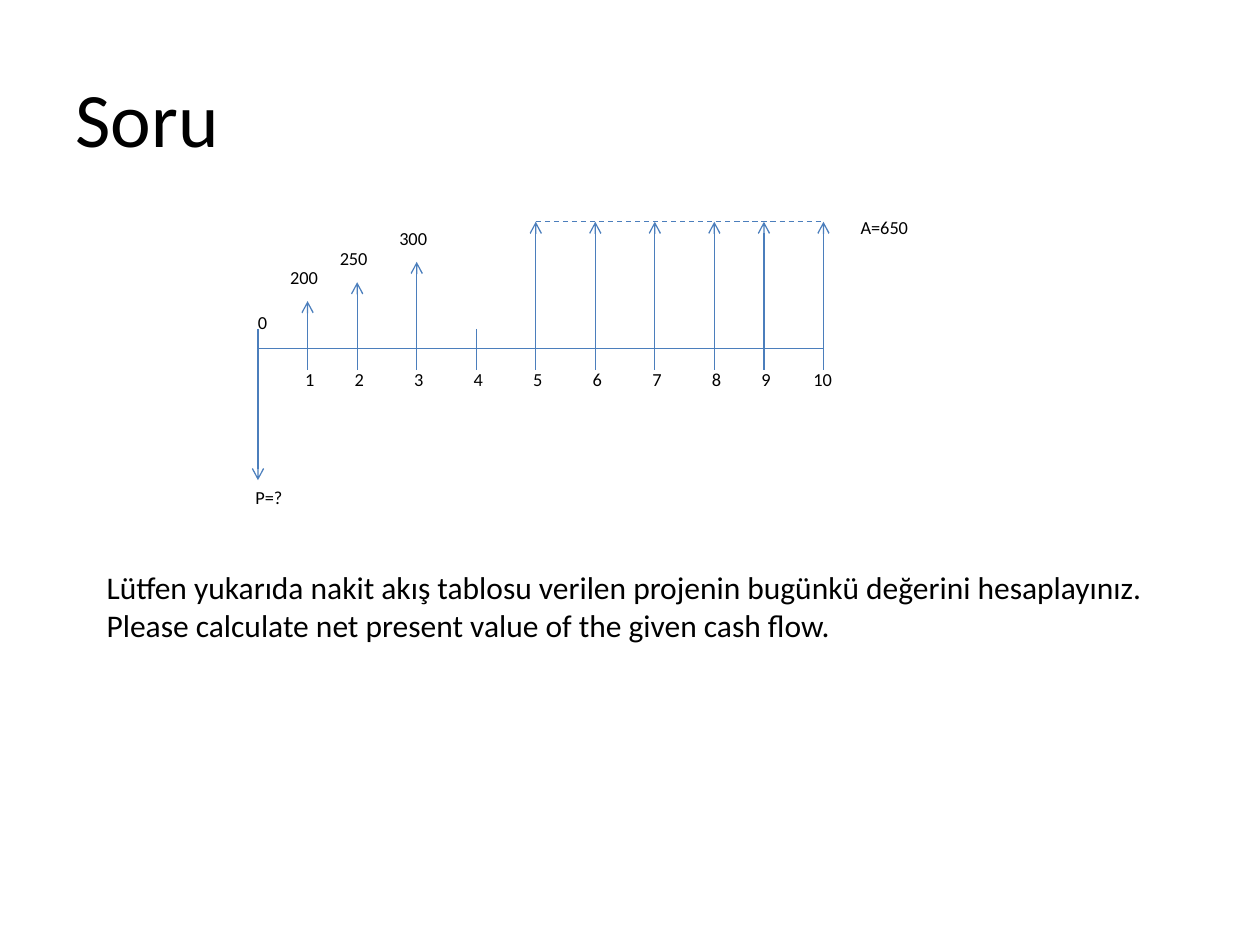
from dataclasses import dataclass

from lxml import etree
from pptx import Presentation
from pptx.dml.color import RGBColor
from pptx.enum.dml import MSO_LINE
from pptx.enum.shapes import MSO_CONNECTOR
from pptx.enum.text import MSO_ANCHOR, PP_ALIGN
from pptx.oxml.ns import qn
from pptx.shapes.connector import Connector
from pptx.text.text import TextFrame
from pptx.util import Cm, Pt

STRAIGHT = MSO_CONNECTOR.STRAIGHT
DASH = MSO_LINE.DASH
LEFT = PP_ALIGN.LEFT
MIDDLE = MSO_ANCHOR.MIDDLE

FONT = "Calibri"
COLORS = {"text": "000000", "line": "4B7EBC"}

# Diagram measures in centimetres
AXIS_Y = 7.02
TICK_HALF = 0.39
ANNUITY_RISE = 2.55
ANNUITY_Y = AXIS_Y - ANNUITY_RISE
PAYMENT_DROP = 2.66
PERIOD_LABEL_Y = 7.29
LABEL_HEIGHT = 0.71
LABEL_SIZE = 10.5


@dataclass
class Period:
    number: int
    x: float
    rise: float = 0
    amount: str = ""


@dataclass
class Label:
    text: str
    x: float
    y: float
    width: float


PERIODS = [
    Period(0, 5.2, -PAYMENT_DROP),
    Period(1, 6.2, 0.95, "200"),
    Period(2, 7.2, 1.33, "250"),
    Period(3, 8.4, 1.74, "300"),
    Period(4, 9.6),
    *(Period(n, x, ANNUITY_RISE)
      for n, x in enumerate((10.8, 12, 13.2, 14.4, 15.4, 16.6), start=5)),
]
START_X, END_X = PERIODS[0].x, PERIODS[-1].x

LABELS = [
    Label("A=650", 17.1, 4.24, 1.8),
    Label("0", 4.95, 6.15, 0.6),
    Label("P=?", 4.9, AXIS_Y + PAYMENT_DROP, 1.6),
]

QUESTION = [
    "Lütfen yukarıda nakit akış tablosu verilen projenin bugünkü değerini hesaplayınız.",
    "Please calculate net present value of the given cash flow.",
]


def write(tf: TextFrame, lines: list[str], size: float) -> None:
    tf.word_wrap = True
    for i, line in enumerate(lines):
        p = tf.add_paragraph() if i else tf.paragraphs[0]
        p.alignment = LEFT
        r = p.add_run()
        r.text = line
        r.font.name = FONT
        r.font.size = Pt(size)
        r.font.color.rgb = RGBColor.from_string(COLORS["text"])


def add_line(shapes, x1: float, y1: float, x2: float, y2: float) -> Connector:
    line = shapes.add_connector(STRAIGHT, Cm(x1), Cm(y1), Cm(x2), Cm(y2))
    line.line.color.rgb = RGBColor.from_string(COLORS["line"])
    line.line.width = Pt(0.75)
    etree.SubElement(line._element.spPr, qn("a:effectLst"))
    return line


def add_arrow(shapes, x: float, rise: float) -> None:
    """Draw a vertical cash flow from the axis; a negative rise points down."""
    arrow = add_line(shapes, x, AXIS_Y, x, AXIS_Y - rise)
    etree.SubElement(arrow.line._get_or_add_ln(), qn("a:tailEnd"), type="arrow")


def add_label(shapes, label: Label) -> None:
    box = shapes.add_textbox(Cm(label.x), Cm(label.y),
                             Cm(label.width), Cm(LABEL_HEIGHT))
    write(box.text_frame, [label.text], LABEL_SIZE)


def period_labels(period: Period) -> list[Label]:
    """Place the number below the axis and the amount above the arrow tip."""
    labels = []
    if period.number:
        text = str(period.number)
        width = 0.6 if len(text) == 1 else 0.98
        left = period.x - 0.3 if len(text) == 1 else period.x - 0.45
        labels.append(Label(text, left, PERIOD_LABEL_Y, width))
    if period.amount:
        top = AXIS_Y - period.rise - 0.83
        labels.append(Label(period.amount, period.x - 0.6, top, 1.2))
    return labels


def add_cash_flow(shapes) -> None:
    add_line(shapes, START_X, AXIS_Y, END_X, AXIS_Y)
    for period in PERIODS:
        add_line(shapes, period.x, AXIS_Y - TICK_HALF,
                 period.x, AXIS_Y + TICK_HALF + 0.04)
        if period.rise:
            add_arrow(shapes, period.x, period.rise)
        for label in period_labels(period):
            add_label(shapes, label)
    annuity = add_line(shapes, PERIODS[5].x, ANNUITY_Y, END_X, ANNUITY_Y)
    annuity.line.dash_style = DASH
    for label in LABELS:
        add_label(shapes, label)


def main() -> None:
    prs = Presentation()
    prs.slide_width, prs.slide_height = Cm(25.4), Cm(19.05)
    s = prs.slides.add_slide(prs.slide_layouts[5])

    title = s.shapes.title
    title.left, title.top = Cm(1.27), Cm(0.76)
    title.width, title.height = Cm(22.86), Cm(3.18)
    title.text_frame.vertical_anchor = MIDDLE
    write(title.text_frame, ["Soru"], 44)

    add_cash_flow(s.shapes.add_group_shape().shapes)

    question = s.shapes.add_textbox(Cm(1.9), Cm(11.33), Cm(22.6), Cm(1.8))
    write(question.text_frame, QUESTION, 18)

    prs.save("out.pptx")


if __name__ == "__main__":
    main()
